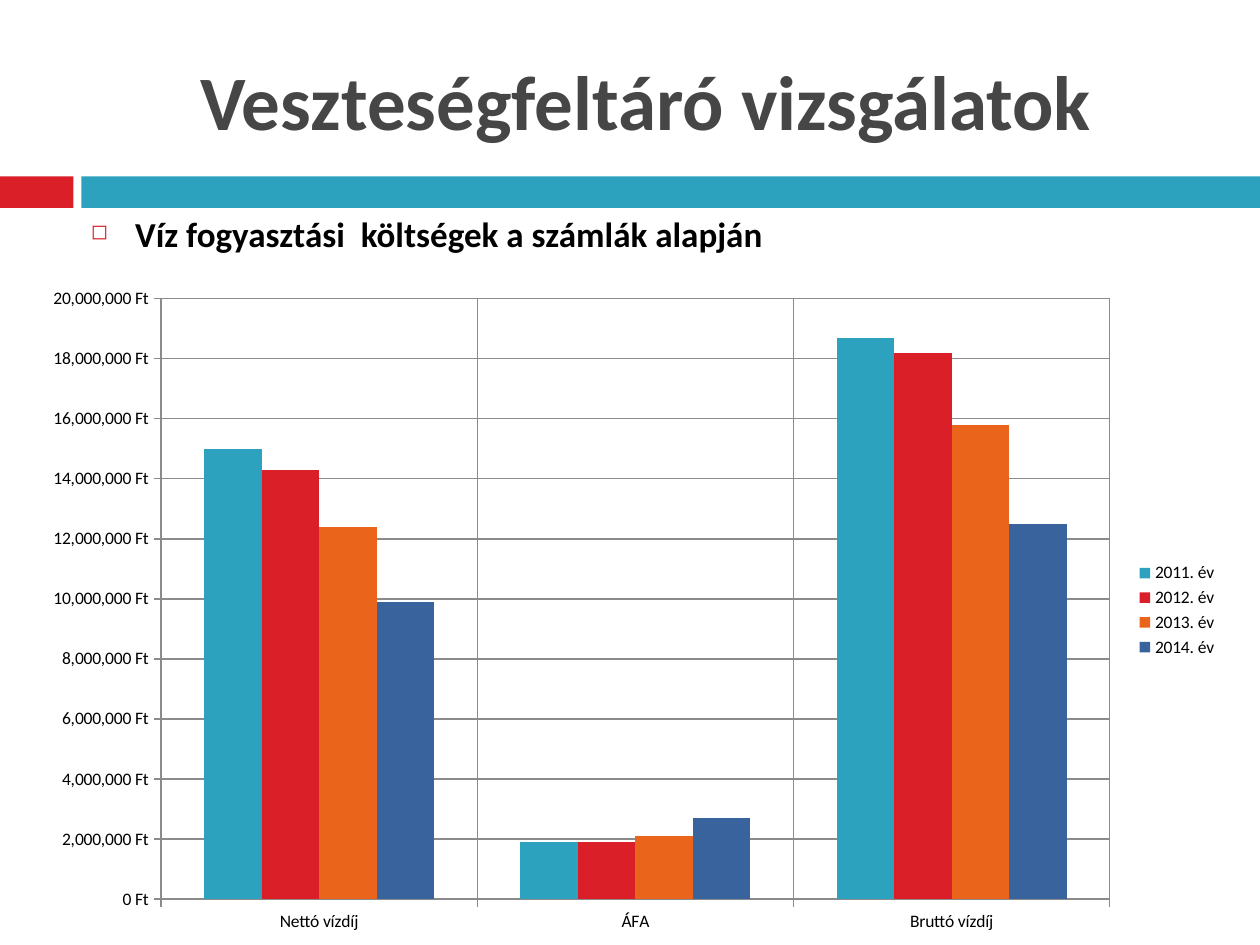
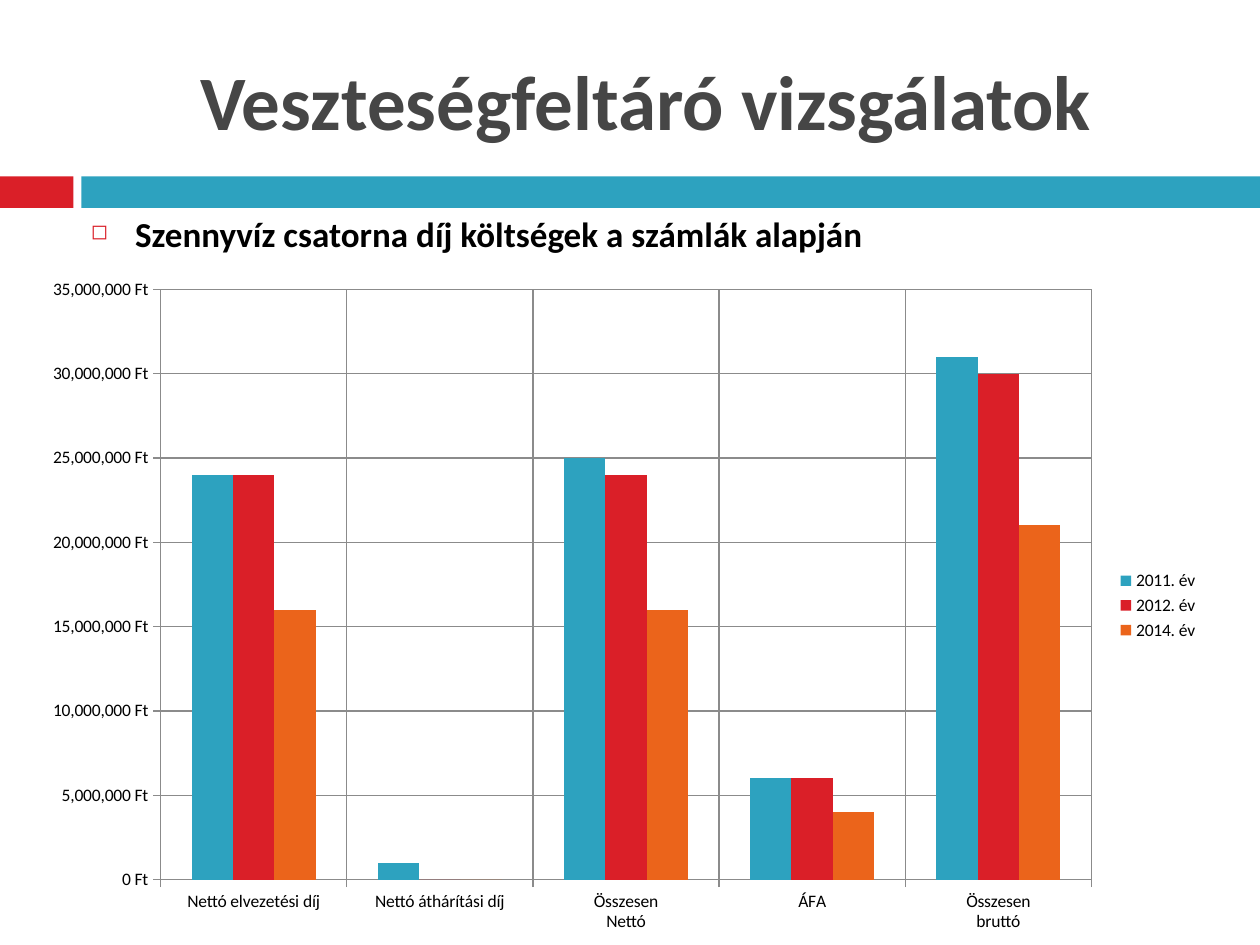
"""Builds two slides that compare yearly water and sewage costs in column charts."""
from dataclasses import dataclass

from lxml import etree
from pptx import Presentation
from pptx.chart.data import CategoryChartData
from pptx.dml.color import RGBColor
from pptx.enum.chart import XL_CHART_TYPE, XL_LEGEND_POSITION, XL_TICK_MARK
from pptx.enum.shapes import MSO_SHAPE
from pptx.enum.text import MSO_ANCHOR, PP_ALIGN
from pptx.oxml.ns import qn
from pptx.util import Pt

COLUMNS = XL_CHART_TYPE.COLUMN_CLUSTERED
LEGEND_RIGHT = XL_LEGEND_POSITION.RIGHT
CROSS = XL_TICK_MARK.CROSS
RECT = MSO_SHAPE.RECTANGLE
MIDDLE = MSO_ANCHOR.MIDDLE
LEFT, CENTER = PP_ALIGN.LEFT, PP_ALIGN.CENTER

TITLE = "Veszteségfeltáró vizsgálatok"
FORINT = '#,##0\\ "Ft";[Red]#,##0\\ "Ft"'
MILLION = 1_000_000

SLIDES = [
    {
        "heading": "Víz fogyasztási  költségek a számlák alapján",
        "box": (16.8, 157.5, 686.2, 382.3),
        "axis": (20, 2),
        "categories": ["Nettó vízdíj", "ÁFA", "Bruttó vízdíj"],
        "series": {
            "2011. év": (15, 1.9, 18.7),
            "2012. év": (14.3, 1.9, 18.2),
            "2013. év": (12.4, 2.1, 15.8),
            "2014. év": (9.9, 2.7, 12.5),
        },
    },
    {
        "heading": "Szennyvíz csatorna díj költségek a számlák alapján",
        "box": (16.8, 152, 675.4, 388),
        "axis": (35, 5),
        "categories": ["Nettó elvezetési díj", "Nettó áthárítási díj",
                       "Összesen\nNettó", "ÁFA", "Összesen\nbruttó"],
        "series": {
            "2011. év": (24, 1, 25, 6, 31),
            "2012. év": (24, 0, 24, 6, 30),
            "2014. év": (16, 0, 16, 4, 21),
        },
    },
]


@dataclass(frozen=True)
class Theme:
    font: str = "Calibri"
    title: str = "464646"
    text: str = "000000"
    grid: str = "8B8B8B"
    teal: str = "2DA2BF"
    red: str = "DA1F28"
    series: tuple = ("2DA2BF", "DA1F28", "EB641B", "39639D")
    title_size: int = 44
    heading_size: int = 20
    chart_size: int = 10


T = Theme()
SLIDE_W, SLIDE_H = 720, 540
BAND_TOP, BAND_H = 100.8, 18
BANDS = [(0, 42, T.red), (46.5, SLIDE_W - 46.5, T.teal)]
TITLE_BOX = (48.2, 18, 642.2, 77.8)
HEADING_BOX = (44.9, 118.1, 642.2, 37.4)
INDENT = 25.2


def points(box):
    return [Pt(v) for v in box]


def style(font, size, color, bold=False):
    font.name = T.font
    font.size = Pt(size)
    font.bold = bold
    font.color.rgb = RGBColor.from_string(color)


def add_bands(s):
    for left, width, color in BANDS:
        band = s.shapes.add_shape(RECT, *points((left, BAND_TOP, width, BAND_H)))
        band.shadow.inherit = False
        band.fill.solid()
        band.fill.fore_color.rgb = RGBColor.from_string(color)
        band.line.fill.background()


def add_title(s):
    sp = s.shapes.title
    sp.left, sp.top, sp.width, sp.height = points(TITLE_BOX)
    tf = sp.text_frame
    tf.text = TITLE
    tf.vertical_anchor = MIDDLE
    p = tf.paragraphs[0]
    p.alignment = CENTER
    style(p.runs[0].font, T.title_size, T.title, bold=True)


def add_bullet(p):
    pPr = p._p.get_or_add_pPr()
    pPr.set("marL", str(Pt(INDENT)))
    pPr.set("indent", str(-Pt(INDENT)))
    color = etree.SubElement(pPr, qn("a:buClr"))
    etree.SubElement(color, qn("a:srgbClr"), val=T.red)
    etree.SubElement(pPr, qn("a:buSzPct"), val="60000")
    etree.SubElement(pPr, qn("a:buChar"), char="◻")


def add_heading(s, text):
    tf = s.shapes.add_textbox(*points(HEADING_BOX)).text_frame
    tf.word_wrap = True
    tf.text = text
    p = tf.paragraphs[0]
    p.alignment = LEFT
    p.space_before = Pt(7)
    add_bullet(p)
    style(p.runs[0].font, T.heading_size, T.text, bold=True)


def style_axis(axis):
    axis.has_major_gridlines = True
    axis.major_tick_mark = CROSS
    for line in (axis.format.line, axis.major_gridlines.format.line):
        line.width = Pt(0.75)
        line.color.rgb = RGBColor.from_string(T.grid)


def add_cost_chart(s, content):
    data = CategoryChartData()
    data.categories = content["categories"]
    for year, costs in content["series"].items():
        data.add_series(year, [round(cost * MILLION) for cost in costs])
    chart = s.shapes.add_chart(COLUMNS, *points(content["box"]), data).chart
    style(chart.font, T.chart_size, T.text)
    chart.has_title = False
    chart.has_legend = True
    chart.legend.position = LEGEND_RIGHT
    chart.legend.include_in_layout = False

    plot = chart.plots[0]
    plot.vary_by_categories = False
    plot.gap_width = 150
    plot.overlap = 0
    for series, color in zip(plot.series, T.series):
        series.format.fill.solid()
        series.format.fill.fore_color.rgb = RGBColor.from_string(color)

    style_axis(chart.category_axis)
    axis = chart.value_axis
    style_axis(axis)
    top, step = content["axis"]
    axis.minimum_scale = 0
    axis.maximum_scale = top * MILLION
    axis.major_unit = step * MILLION
    axis.tick_labels.number_format = FORINT
    axis.tick_labels.number_format_is_linked = False


def main():
    prs = Presentation()
    prs.slide_width, prs.slide_height = points((SLIDE_W, SLIDE_H))
    title_only = prs.slide_layouts[5]
    for content in SLIDES:
        s = prs.slides.add_slide(title_only)
        add_bands(s)
        add_title(s)
        add_heading(s, content["heading"])
        add_cost_chart(s, content)
    prs.save("out.pptx")


if __name__ == "__main__":
    main()
